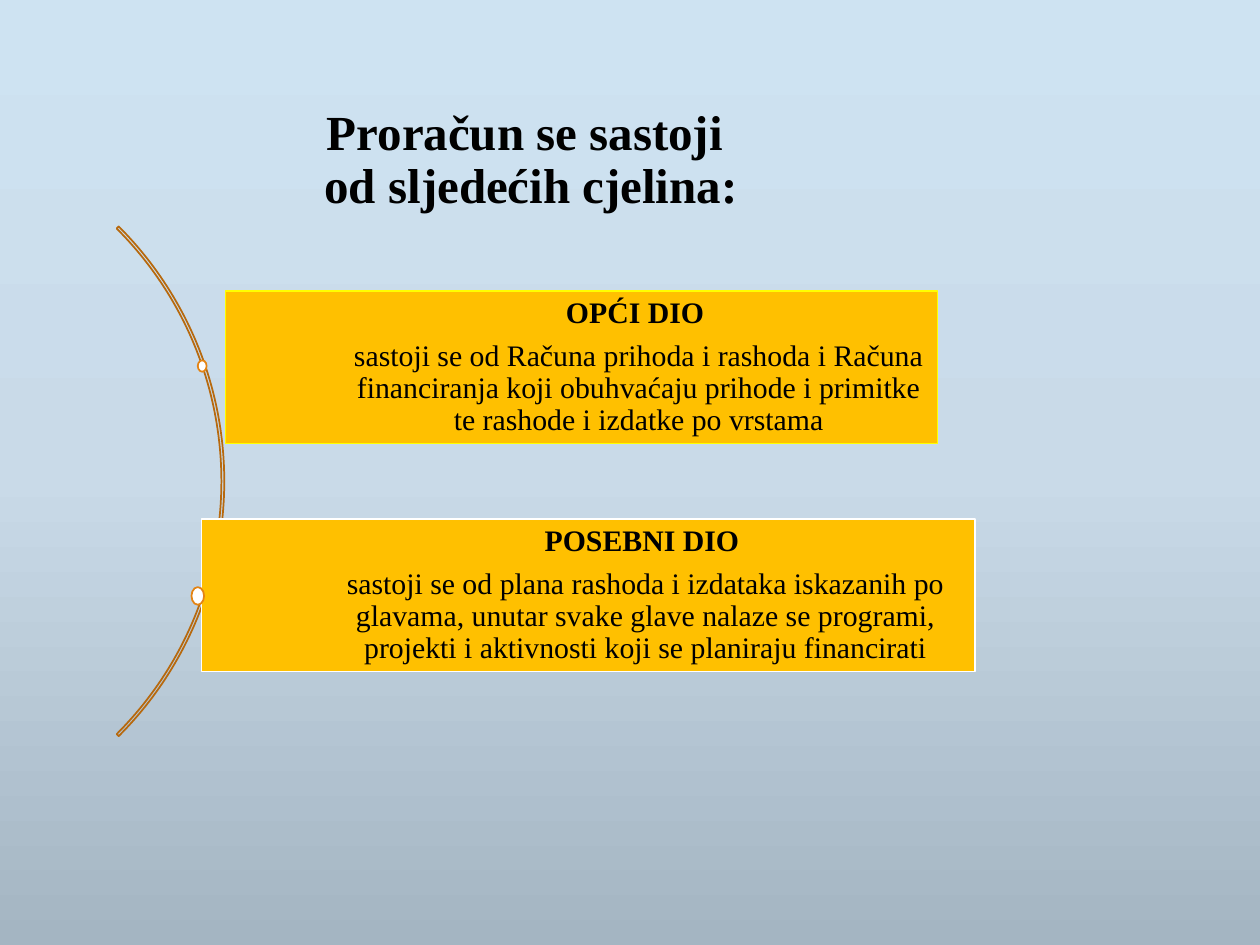
from copy import deepcopy
from dataclasses import dataclass

from pptx import Presentation
from pptx.dml.color import RGBColor
from pptx.enum.shapes import MSO_SHAPE as Preset
from pptx.enum.text import MSO_ANCHOR as Anchor, PP_ALIGN as Align
from pptx.oxml.ns import qn
from pptx.util import Inches, Pt


@dataclass(frozen=True)
class Theme:
    font: str = "Times New Roman"
    title_size: int = 28
    body_size: int = 17
    line_width: int = 1
    paragraph_gap: int = 6
    line_spacing: float = 0.9
    text: str = "000000"
    box: str = "FFC000"
    dot: str = "FFFFFF"
    dot_line: str = "E48312"
    arc_line: str = "B7690E"
    sky: tuple = ("CEE3F2", "C9DAE8", "A4B5C2")


def set_values(target, values):
    for name, value in values.items():
        setattr(target, name, value)


class SlideBuilder:
    """Draws on one slide, measured on a grid of 100 columns by 75 rows."""

    COLUMNS, ROWS = 100, 75

    def __init__(self, presentation, theme):
        self.theme = theme
        self.column = presentation.slide_width / self.COLUMNS
        self.row = presentation.slide_height / self.ROWS
        self.slide = presentation.slides.add_slide(presentation.slide_layouts[6])

    def place(self, left, top, width, height):
        return (round(left * self.column), round(top * self.row),
                round(width * self.column), round(height * self.row))

    def background(self):
        fill = self.slide.background.fill
        fill.gradient()
        fill.gradient_angle = 270
        stop_list = self.slide.element.find(".//" + qn("a:gsLst"))
        stop_list.insert(1, deepcopy(stop_list[0]))
        for index, (stop, color) in enumerate(zip(fill.gradient_stops, self.theme.sky)):
            stop.position = index / 2
            stop.color.rgb = RGBColor.from_string(color)

    def shape(self, preset, area, line, fill=None):
        shape = self.slide.shapes.add_shape(preset, *self.place(*area))
        shape.shadow.inherit = False
        if fill:
            shape.fill.solid()
            shape.fill.fore_color.rgb = RGBColor.from_string(fill)
        else:
            shape.fill.background()
        shape.line.color.rgb = RGBColor.from_string(line)
        shape.line.width = Pt(self.theme.line_width)
        return shape

    def paragraph(self, paragraph, text, size, bold, gap=0):
        paragraph.text = text
        set_values(paragraph, {"alignment": Align.CENTER, "space_after": Pt(gap),
                               "line_spacing": self.theme.line_spacing})
        for run in paragraph.runs:
            set_values(run.font, {"name": self.theme.font, "size": Pt(size), "bold": bold})
            run.font.color.rgb = RGBColor.from_string(self.theme.text)

    def title(self, area, text):
        frame = self.slide.shapes.add_textbox(*self.place(*area)).text_frame
        set_values(frame, {"word_wrap": True, "vertical_anchor": Anchor.MIDDLE})
        self.paragraph(frame.paragraphs[0], text, self.theme.title_size, True)

    def arc(self, area, start, end, thickness):
        shape = self.shape(Preset.BLOCK_ARC, area, self.theme.arc_line)
        for index, value in enumerate((start, end, thickness)):
            shape.adjustments[index] = value

    def section(self, area, line, heading, body):
        frame = self.shape(Preset.RECTANGLE, area, line, self.theme.box).text_frame
        margin = Inches(0.05)
        set_values(frame, {"word_wrap": True, "vertical_anchor": Anchor.MIDDLE,
                           "margin_left": Inches(0.96), "margin_right": margin,
                           "margin_top": margin, "margin_bottom": margin})
        size, gap = self.theme.body_size, self.theme.paragraph_gap
        self.paragraph(frame.paragraphs[0], heading, size, True, gap)
        self.paragraph(frame.add_paragraph(), body, size, False, gap)

    def dot(self, area):
        self.shape(Preset.OVAL, area, self.theme.dot_line, self.theme.dot)


# Box area, box outline, dot area, heading, body
SECTIONS = [
    ((17.9, 23.1, 56.5, 12.1), "FFFF00", (15.7, 28.6, 0.7, 0.9), "OPĆI DIO ",
     "sastoji se od Računa prihoda i rashoda i Računa financiranja koji "
     "obuhvaćaju prihode i primitke te rashode i izdatke po vrstama"),
    ((16, 41.2, 61.4, 12.1), "FFFFFF", (15.2, 46.6, 1, 1.4), "POSEBNI DIO ",
     "sastoji se od plana rashoda i izdataka iskazanih po glavama, unutar svake "
     "glave nalaze se programi, projekti i aktivnosti koji se planiraju financirati"),
]


def main():
    presentation = Presentation()
    set_values(presentation, {"slide_width": Inches(10), "slide_height": Inches(7.5)})
    builder = SlideBuilder(presentation, Theme())

    # Background and title
    builder.background()
    builder.title((6.3, 7.5, 71.7, 10.5), "Proračun se sastoji \vod sljedećih cjelina:")

    # Arc with the two parts of the budget
    builder.arc((-39.4, 9.6, 57.2, 57.2), start=189, end=27, thickness=0.004)
    for box_area, outline, dot_area, heading, body in SECTIONS:
        builder.section(box_area, outline, heading, body)
        builder.dot(dot_area)

    presentation.save("out.pptx")


if __name__ == "__main__":
    main()
